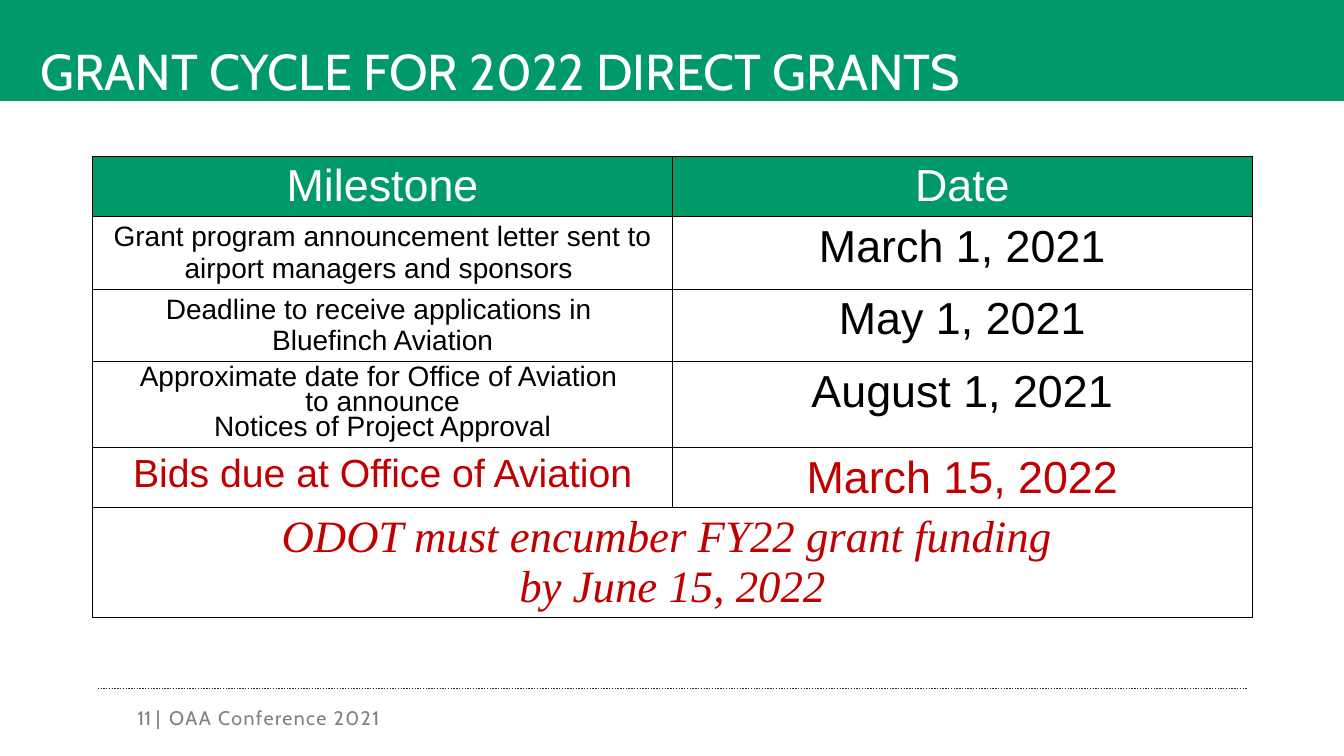
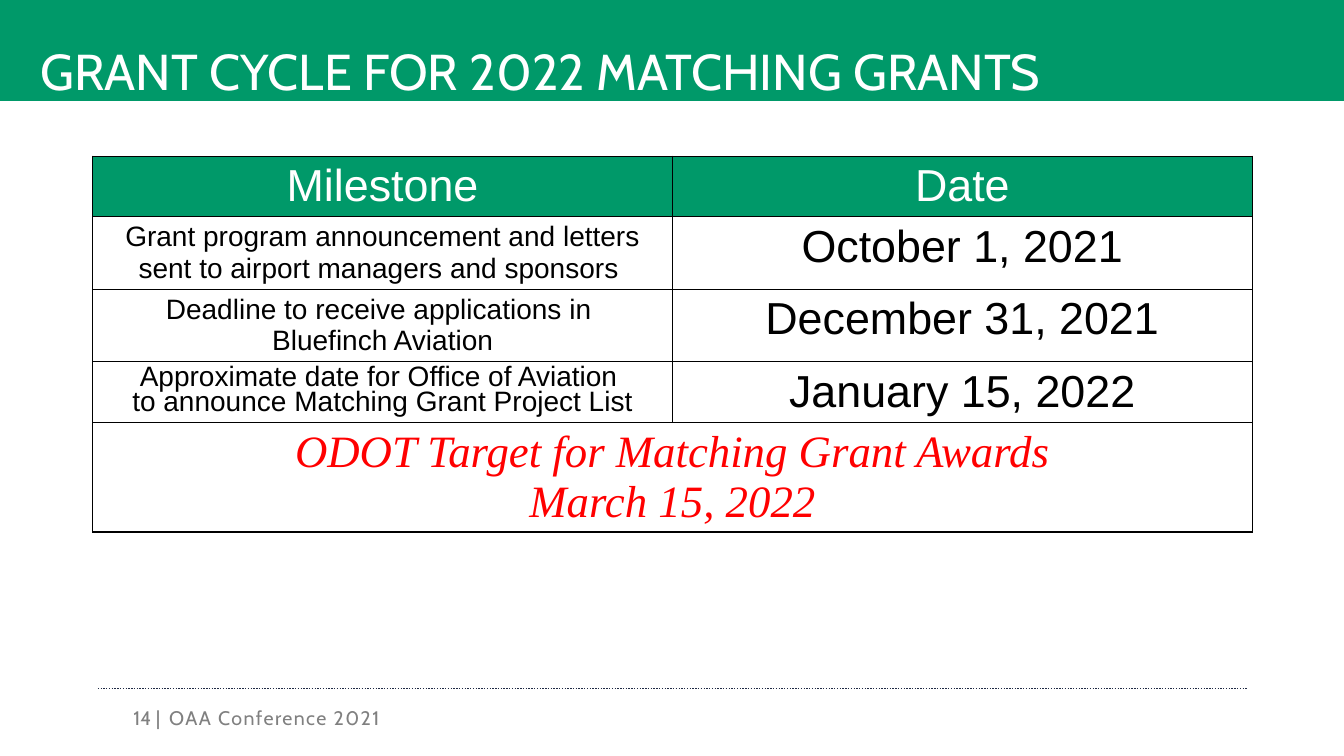
"""Build two grant cycle slides, each with a milestone table."""
from dataclasses import dataclass

from lxml import etree
from pptx import Presentation
from pptx.dml.color import RGBColor
from pptx.enum.dml import MSO_LINE_DASH_STYLE as Dash
from pptx.enum.shapes import MSO_CONNECTOR
from pptx.enum.text import MSO_ANCHOR as Anchor, MSO_AUTO_SIZE as AutoSize, PP_ALIGN as Align
from pptx.oxml.ns import qn
from pptx.util import Inches, Pt


@dataclass(frozen=True)
class Theme:
    """Colours, fonts and type sizes."""
    green: str = "009969"
    white: str = "FFFFFF"
    black: str = "000000"
    grey: str = "808080"
    navy: str = "1F2A44"
    dark_red: str = "C00000"
    red: str = "FF0000"
    heading_font: str = "Cabin"
    body_font: str = "Arial"
    accent_font: str = "Times New Roman"
    title_size: int = 36
    large_size: int = 32
    medium_size: int = 28
    small_size: int = 20
    footer_size: int = 14
    tight_spacing: int = 18


THEME = Theme()
FOOTER = "OAA Conference 2021"
HEADINGS = ("Milestone", "Date")
DEADLINE = ["Deadline to receive applications in ", "Bluefinch Aviation"]

SLIDES = [
    {
        "number": 11,
        "title": "GRANT CYCLE FOR 2022 DIRECT GRANTS",
        "milestones": [
            (["Grant program announcement letter sent to airport managers and sponsors "],
             "March 1, 2021", "normal"),
            (DEADLINE, "May 1, 2021", "normal"),
            (["Approximate date for Office of Aviation ", "to announce",
              "Notices of Project Approval"], "August 1, 2021", "tight"),
            (["Bids due at Office of Aviation"], "March 15, 2022", "key"),
        ],
        "closing": ["ODOT must encumber FY22 grant funding ", "by June 15, 2022"],
        "closing_color": THEME.dark_red,
        "table_height": 4.82,
    },
    {
        "number": 14,
        "title": "GRANT CYCLE FOR 2022 MATCHING GRANTS",
        "milestones": [
            (["Grant program announcement and letters sent to airport managers and sponsors "],
             "October 1, 2021", "normal"),
            (DEADLINE, "December 31, 2021", "normal"),
            (["Approximate date for Office of Aviation ",
              "to announce Matching Grant Project List"], "January 15, 2022", "tight"),
        ],
        "closing": ["ODOT Target for Matching Grant Awards", "March 15, 2022"],
        "closing_color": THEME.red,
        "table_height": 3.97,
    },
]

ROW_STYLES = {
    "normal": {"size": THEME.small_size, "color": THEME.black},
    "tight": {"size": THEME.small_size, "color": THEME.black, "spacing": THEME.tight_spacing},
    "key": {"size": THEME.medium_size, "color": THEME.dark_red},
}


def write(frame, lines, size, color, font=THEME.body_font, align=Align.CENTER,
          italic=False, spacing=None, tracking=None):
    for index, line in enumerate(lines):
        paragraph = frame.add_paragraph() if index else frame.paragraphs[0]
        paragraph.alignment = align
        if spacing:
            paragraph.line_spacing = Pt(spacing)
        run = paragraph.add_run()
        run.text = line
        run.font.name = font
        run.font.size = Pt(size)
        run.font.italic = italic
        run.font.color.rgb = RGBColor.from_string(color)
        if tracking:
            run._r.get_or_add_rPr().set("spc", str(tracking * 100))


def set_margins(frame, left, top, right, bottom):
    frame.margin_left, frame.margin_top = Inches(left), Inches(top)
    frame.margin_right, frame.margin_bottom = Inches(right), Inches(bottom)


def add_title(slide, text, width):
    title = slide.shapes.title
    title.left, title.top, title.width, title.height = 0, 0, width, Inches(1)
    title.fill.solid()
    title.fill.fore_color.rgb = RGBColor.from_string(THEME.green)
    frame = title.text_frame
    frame.auto_size = AutoSize.NONE
    frame.vertical_anchor = Anchor.BOTTOM
    set_margins(frame, 0.4, 0.1, 0.4, 0)
    write(frame, [text], THEME.title_size, THEME.white, THEME.heading_font, Align.LEFT)


def add_footer_text(slide, text, left, width, align, wrap=True, tracking=None):
    box = slide.shapes.add_textbox(Inches(left), Inches(6.92), Inches(width), Inches(0.4))
    frame = box.text_frame
    frame.word_wrap = wrap
    frame.vertical_anchor = Anchor.MIDDLE
    if not wrap:
        set_margins(frame, 0, 0, 0, 0)
    write(frame, [text], THEME.footer_size, THEME.grey, THEME.heading_font, align,
          tracking=tracking)


def add_footer(slide, number):
    rule = slide.shapes.add_connector(
        MSO_CONNECTOR.STRAIGHT, Inches(0.97), Inches(6.83), Inches(12.37), Inches(6.83))
    rule.line.color.rgb = RGBColor.from_string(THEME.navy)
    rule.line.width = Pt(1)
    rule.line.dash_style = Dash.ROUND_DOT
    etree.SubElement(rule._element.spPr, qn("a:effectLst"))
    add_footer_text(slide, f"{number} |", 1.07, 0.52, Align.RIGHT, wrap=False)
    add_footer_text(slide, FOOTER, 1.58, 8.48, Align.LEFT, tracking=1)


def format_cell(cell, fill=None):
    properties = cell._tc.get_or_add_tcPr()
    for side in ("lnL", "lnR", "lnT", "lnB"):
        border = etree.SubElement(properties, qn(f"a:{side}"), w=str(Pt(1)))
        solid = etree.SubElement(border, qn("a:solidFill"))
        etree.SubElement(solid, qn("a:srgbClr"), val=THEME.black)
    if fill:
        cell.fill.solid()
        cell.fill.fore_color.rgb = RGBColor.from_string(fill)
    else:
        cell.fill.background()


def add_milestone_table(slide, content):
    row_count = len(content["milestones"]) + 2
    table_shape = slide.shapes.add_table(
        row_count, len(HEADINGS), Inches(0.92), Inches(1.55), Inches(11.5),
        Inches(0.41) * row_count)
    table = table_shape.table
    table.first_row = table.horz_banding = False
    for row_index in range(row_count):
        for column_index in range(len(HEADINGS)):
            format_cell(table.cell(row_index, column_index),
                        None if row_index else THEME.green)

    for column_index, heading in enumerate(HEADINGS):
        write(table.cell(0, column_index).text_frame, [heading],
              THEME.large_size, THEME.white)
    for row_index, (lines, date, style_name) in enumerate(content["milestones"], 1):
        style = ROW_STYLES[style_name]
        write(table.cell(row_index, 0).text_frame, lines, **style)
        write(table.cell(row_index, 1).text_frame, [date], THEME.large_size, style["color"])

    closing = table.cell(row_count - 1, 0)
    closing.merge(table.cell(row_count - 1, 1))
    write(closing.text_frame, content["closing"], THEME.large_size,
          content["closing_color"], THEME.accent_font, italic=True)
    table_shape.height = Inches(content["table_height"])


def main():
    presentation = Presentation()
    presentation.slide_width = Inches(13.33)
    presentation.slide_height = Inches(7.5)
    title_only = presentation.slide_layouts[5]
    for content in SLIDES:
        slide = presentation.slides.add_slide(title_only)
        add_title(slide, content["title"], presentation.slide_width)
        add_milestone_table(slide, content)
        add_footer(slide, content["number"])
    presentation.save("out.pptx")


if __name__ == "__main__":
    main()
